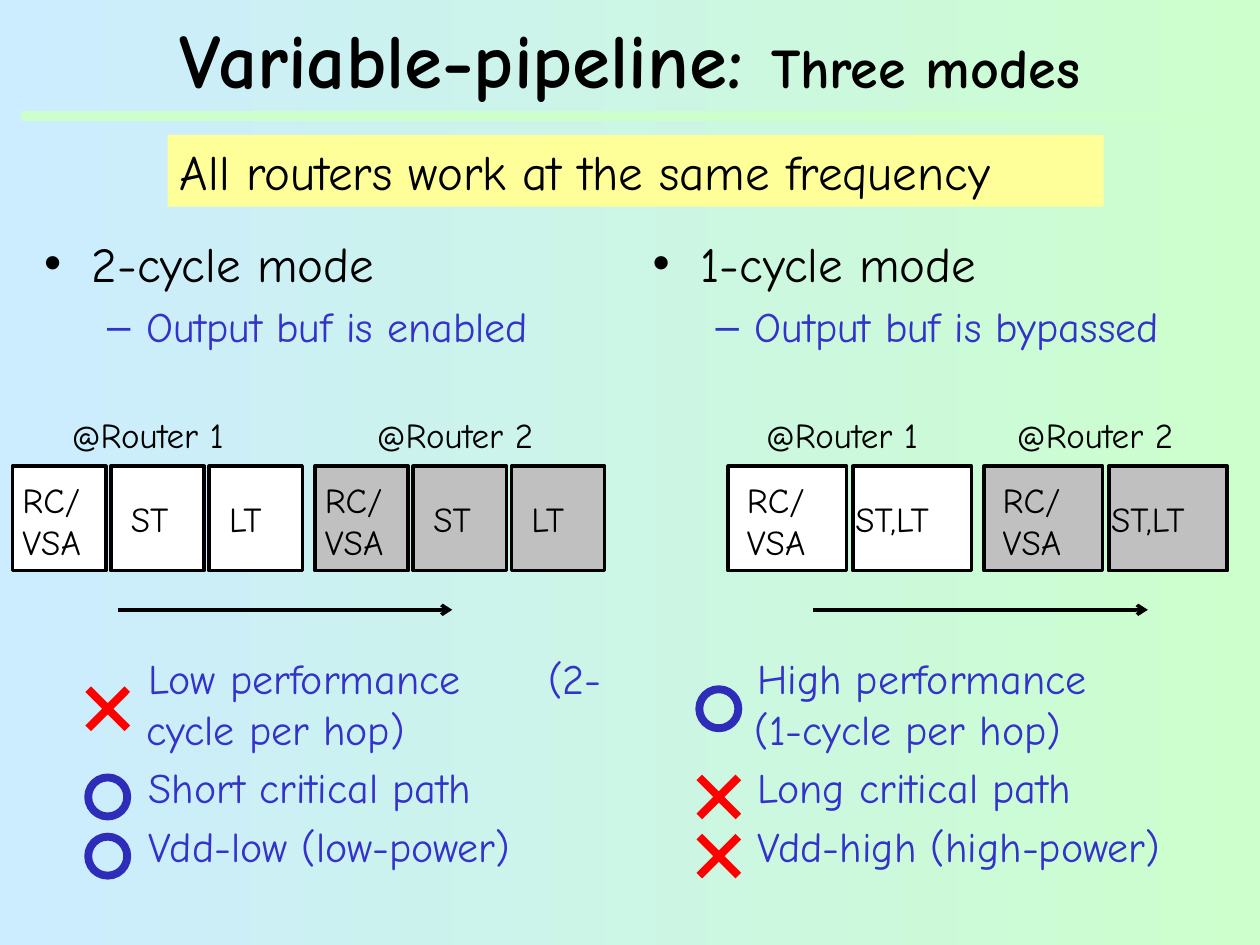
import pptx
import pptx.util
from lxml import etree
from pptx.dml.color import RGBColor
from pptx.enum.shapes import MSO_CONNECTOR, MSO_SHAPE
from pptx.enum.text import MSO_ANCHOR, MSO_AUTO_SIZE, PP_ALIGN
from pptx.oxml.ns import qn
from pptx.util import Inches, Pt

FONT = "Comic Neue"
BLACK, WHITE, GRAY, RED = "000000", "FFFFFF", "C0C0C0", "FF0000"
TEXT_BLUE, RING_BLUE, GREEN, YELLOW = "3333CC", "2D2DB9", "CCFFCC", "FFFF99"

TITLE = [("Variable-pipeline: ", 44), ("Three modes", 32)]
BANNER = "All routers work at the same frequency"
# A pair in a verdict text is set apart by a wide gap; stages are (text, left offset, width).
MODES = [
    {
        "body": (0.25, 4.67), "heading": "2-cycle mode", "detail": "Output buf is enabled",
        "verdicts": [("cross", ("Low performance", "(2-cycle per hop)")),
                     ("ring", ("Short critical path",)),
                     ("ring", ("Vdd-low (low-power)",))],
        "mark_left": 0.7, "router_lefts": (0.1, 2.5), "label_lefts": (0.47, 2.89),
        "stage_width": 0.74, "stage_step": 0.78, "arrow": (0.94, 3.59),
        "stages": [("RC/\nVSA", -0.02, 0.78), ("ST", 0.06, 0.58), ("LT", 0.06, 0.54)],
    },
    {
        "body": (5.08, 4.92), "heading": "1-cycle mode", "detail": "Output buf is bypassed",
        "verdicts": [("ring", ("High performance\v(1-cycle per hop)",)),
                     ("cross", ("Long critical path",)),
                     ("cross", ("Vdd-high (high-power)",))],
        "mark_left": 5.55, "router_lefts": (5.78, 7.81), "label_lefts": (5.98, 7.97),
        "stage_width": 0.94, "stage_step": 0.99, "arrow": (6.45, 9.11),
        "stages": [("RC/\nVSA", 0.05, 0.78), ("ST,LT", -0.08, 1.01)],
    },
]
ROUTERS = [("@Router 1", 1.56, WHITE), ("@Router 2", 1.61, GRAY)]
MARK_TOPS = (5.47, 6.17, 6.64)
MARK_SIZE = 0.31
STAGE_TOP, STAGE_HEIGHT = 3.7, 0.83


def color(hex_text):
    return RGBColor.from_string(hex_text)


def set_font(paragraph, size, hex_text=BLACK):
    paragraph.font.name = FONT
    paragraph.font.size = Pt(size)
    paragraph.font.color.rgb = color(hex_text)


def add_line(shapes, start, end, hex_text, width, arrow=False):
    line = shapes.add_connector(MSO_CONNECTOR.STRAIGHT, *map(Inches, start + end))
    line.line.color.rgb = color(hex_text)
    line.line.width = Pt(width)
    if arrow:
        etree.SubElement(line.line._get_or_add_ln(), qn("a:tailEnd"), type="arrow")
    etree.SubElement(line._element.spPr, qn("a:effectLst"))


def add_box(shapes, kind, box, fill=None, outline=None, width=2):
    shape = shapes.add_shape(kind, *map(Inches, box))
    shape.shadow.inherit = False
    if fill:
        shape.fill.solid()
        shape.fill.fore_color.rgb = color(fill)
    else:
        shape.fill.background()
    if outline:
        shape.line.color.rgb = color(outline)
        shape.line.width = Pt(width)
    else:
        shape.line.fill.background()
    return shape


def add_label(shapes, text, box):
    frame = shapes.add_textbox(*map(Inches, box)).text_frame
    frame.word_wrap = False
    frame.auto_size = MSO_AUTO_SIZE.SHAPE_TO_FIT_TEXT
    frame.text = text
    for paragraph in frame.paragraphs:
        set_font(paragraph, 20)


def add_mark(shapes, kind, left, top):
    right, bottom = left + MARK_SIZE, top + MARK_SIZE
    if kind == "ring":
        add_box(shapes, MSO_SHAPE.OVAL, (left, top, MARK_SIZE, MARK_SIZE),
                outline=RING_BLUE, width=4.5)
    else:
        cross = shapes.add_group_shape().shapes
        add_line(cross, (left, bottom), (right, top), RED, 4.5)
        add_line(cross, (right, bottom), (left, top), RED, 4.5)


def format_item(paragraph, size, hex_text, margin, indent, bullet=None, before=4.8):
    properties = paragraph._p.get_or_add_pPr()
    properties.set("marL", str(Inches(margin)))
    properties.set("indent", str(Inches(indent)))
    if bullet:
        etree.SubElement(properties, qn("a:buChar"), char=bullet)
    else:
        etree.SubElement(properties, qn("a:buNone"))
    paragraph.space_before = Pt(before)
    set_font(paragraph, size, hex_text)


def place(placeholder, box):
    placeholder.left, placeholder.top, placeholder.width, placeholder.height = map(Inches, box)
    placeholder.text_frame.auto_size = MSO_AUTO_SIZE.NONE
    placeholder.text_frame.word_wrap = True
    return placeholder.text_frame


def fill_body(placeholder, mode):
    left, width = mode["body"]
    frame = place(placeholder, (left, 1.8, width, 5.37))
    heading = frame.paragraphs[0]
    heading.text = mode["heading"]
    format_item(heading, 28, BLACK, 0.38, -0.38, "•", 5.6)
    detail = frame.add_paragraph()
    detail.text = mode["detail"]
    detail.level = 1
    format_item(detail, 24, TEXT_BLUE, 0.81, -0.31, "–")
    for index, (_, parts) in enumerate(mode["verdicts"]):
        paragraph = frame.add_paragraph()
        paragraph.level = 1
        paragraph.text = parts[0]
        for part in parts[1:]:
            gap = paragraph.add_run()
            gap.text = " "
            gap.font._element.set("spc", "4200")
            paragraph.add_run().text = part
        # The first verdict leaves room for the pipeline diagram above it.
        format_item(paragraph, 24, TEXT_BLUE, 0.81, 0.02, before=4.8 if index else 172.6)


def draw_pipeline(shapes, mode):
    for (name, label_width, fill), router_left, label_left in zip(
            ROUTERS, mode["router_lefts"], mode["label_lefts"]):
        add_label(shapes, name, (label_left, 3.23, label_width, 0.44))
        for index, (text, offset, text_width) in enumerate(mode["stages"]):
            left = router_left + index * mode["stage_step"]
            add_box(shapes, MSO_SHAPE.RECTANGLE,
                    (left, STAGE_TOP, mode["stage_width"], STAGE_HEIGHT), fill, BLACK)
            top, height = (3.75, 0.78) if "\n" in text else (3.9, 0.44)
            add_label(shapes, text, (left + offset, top, text_width, height))
    start, end = mode["arrow"]
    add_line(shapes, (start, 4.84), (end, 4.84), BLACK, 2, arrow=True)


def main():
    presentation = pptx.Presentation()
    presentation.slide_width, presentation.slide_height = Inches(10), Inches(7.5)
    slide = presentation.slides.add_slide(presentation.slide_layouts[3])
    shapes = slide.shapes

    background = slide.background.fill
    background.gradient()
    background.gradient_angle = 0
    for stop, hex_text, position in zip(background.gradient_stops, ("CCECFF", GREEN), (0, 1)):
        stop.color.rgb = color(hex_text)
        stop.position = position
    add_line(shapes, (0.17, 0.92), (9.92, 0.92), GREEN, 6)

    title = place(shapes.title, (0.25, 0.08, 9.5, 0.75))
    title.vertical_anchor = MSO_ANCHOR.MIDDLE
    paragraph = title.paragraphs[0]
    paragraph.alignment = PP_ALIGN.CENTER
    set_font(paragraph, TITLE[0][1])
    paragraph.font.bold = True
    for text, size in TITLE:
        run = paragraph.add_run()
        run.text = text
        run.font.size = Pt(size)

    banner = add_box(shapes, MSO_SHAPE.RECTANGLE, (1.33, 1.07, 7.43, 0.57), YELLOW).text_frame
    banner.text = BANNER
    banner.word_wrap = True
    banner.paragraphs[0].alignment = PP_ALIGN.LEFT
    set_font(banner.paragraphs[0], 28)

    for index, mode in enumerate(MODES, start=1):
        fill_body(slide.placeholders[index], mode)
        draw_pipeline(shapes, mode)
        for (kind, _), top in zip(mode["verdicts"], MARK_TOPS):
            add_mark(shapes, kind, mode["mark_left"], top)

    presentation.save("out.pptx")


if __name__ == "__main__":
    main()
